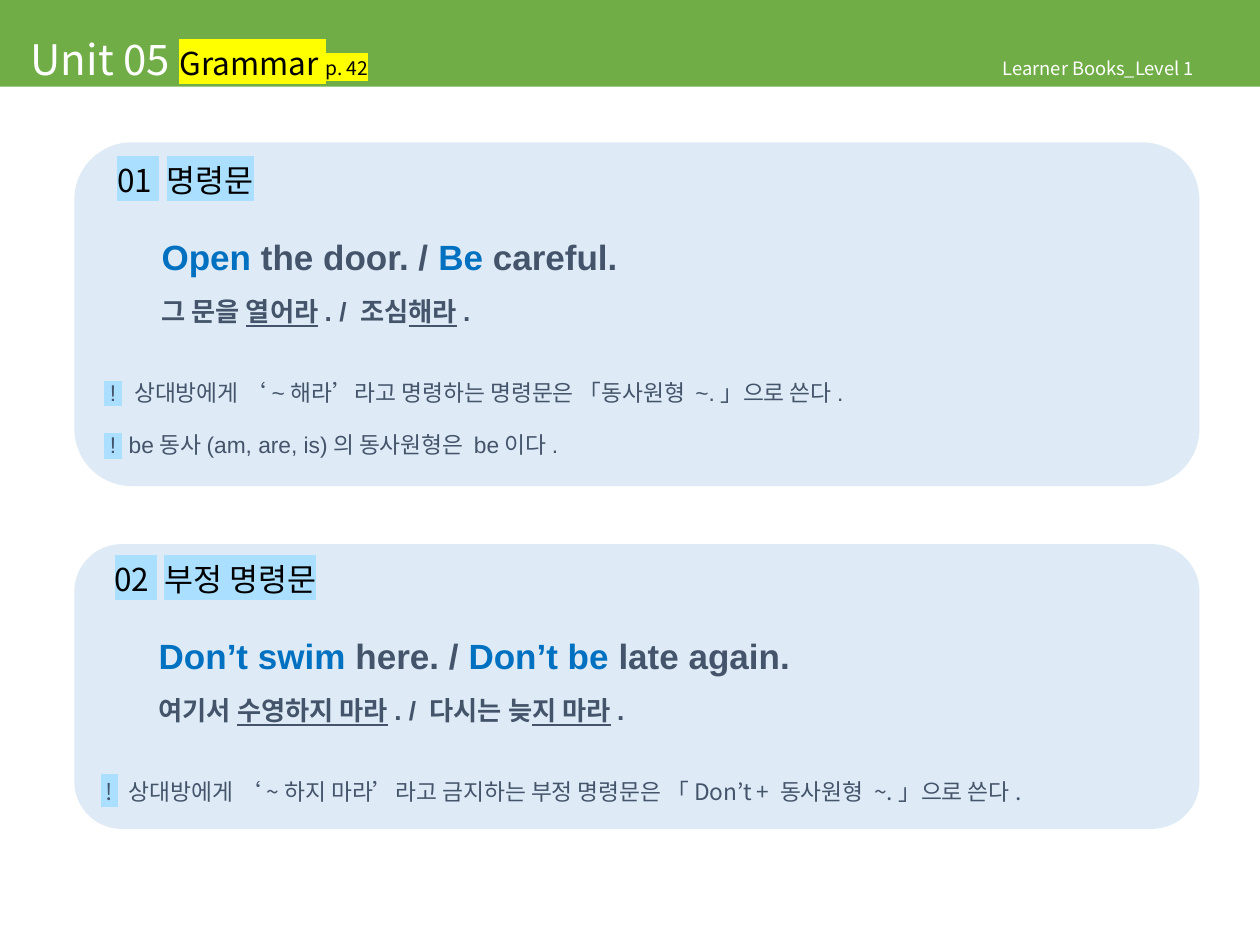
from dataclasses import dataclass

from lxml import etree
from pptx import Presentation
from pptx.dml.color import RGBColor
from pptx.enum.shapes import MSO_SHAPE
from pptx.enum.text import MSO_ANCHOR, PP_ALIGN
from pptx.oxml.ns import qn
from pptx.util import Cm, Pt

RECTANGLE = MSO_SHAPE.RECTANGLE
ROUNDED = MSO_SHAPE.ROUNDED_RECTANGLE
TOP, BOTTOM = MSO_ANCHOR.TOP, MSO_ANCHOR.BOTTOM
LEFT = PP_ALIGN.LEFT

GREEN = RGBColor(0x70, 0xAD, 0x47)
PALE_BLUE = RGBColor(0xDE, 0xEB, 0xF7)
SKY = RGBColor(0xAB, 0xDF, 0xFF)
YELLOW = RGBColor(0xFF, 0xFF, 0x00)
BLUE = RGBColor(0x00, 0x70, 0xC0)
SLATE = RGBColor(0x44, 0x54, 0x6A)
WHITE = RGBColor(0xFF, 0xFF, 0xFF)
BLACK = RGBColor(0x00, 0x00, 0x00)

KOREAN_FONT = "Noto Sans CJK KR"
LATIN_FONT = "Arial"


@dataclass(frozen=True)
class Run:
    text: str
    size: float
    color: RGBColor
    font: str = KOREAN_FONT
    bold: bool = False
    underline: bool = False
    highlight: RGBColor | None = None


@dataclass(frozen=True)
class Panel:
    top: float
    height: float
    heading: str
    english: list[tuple[str, bool]]
    korean: list[tuple[str, bool]]
    notes: list[str]
    note_font: str


HEADING_FORMAT = {"line_spacing": Pt(19)}
ENGLISH_FORMAT = {"line_spacing": Pt(20), "space_before": Pt(25)}
KOREAN_FORMAT = {"line_spacing": Pt(18), "space_before": Pt(10.5)}
FIRST_NOTE_FORMAT = {"line_spacing": Pt(28), "space_before": Pt(17)}
NOTE_FORMAT = {"line_spacing": Pt(28), "space_before": Pt(2)}

PANELS = [
    Panel(
        2.87, 6.93, "01 명령문",
        [("Open", True), (" the door. / ", False), ("Be", True), (" careful.", False)],
        [("그 문을 ", False), ("열어라", True), (". / 조심", False), ("해라", True), (".", False)],
        ["상대방에게 ‘~해라’라고 명령하는 명령문은 「동사원형 ~.」으로 쓴다.",
         "be동사(am, are, is)의 동사원형은 be이다."],
        LATIN_FONT,
    ),
    Panel(
        10.97, 5.74, "02 부정 명령문",
        [("Don’t swim ", True), ("here. / ", False), ("Don’t be", True),
         (" late again.", False)],
        [("여기서 ", False), ("수영하지 마라", True), (". / 다시는 늦", False),
         ("지 마라", True), (".", False)],
        ["상대방에게 ‘~하지 마라’라고 금지하는 부정 명령문은 「Don’t + 동사원형 ~.」으로 쓴다."],
        KOREAN_FONT,
    ),
]


def add_run(paragraph, item: Run) -> None:
    run = paragraph.add_run()
    run.text = item.text
    run.font.color.rgb = item.color
    properties = run.font._element
    if item.highlight is not None:
        highlight = etree.SubElement(properties, qn("a:highlight"))
        etree.SubElement(highlight, qn("a:srgbClr"), val=str(item.highlight))
    values = {"size": Pt(item.size), "name": item.font,
              "bold": item.bold, "underline": item.underline}
    for name, value in values.items():
        setattr(run.font, name, value)
    etree.SubElement(properties, qn("a:ea"), typeface=KOREAN_FONT)


def write_paragraph(paragraph, runs: list[Run], values: dict, indent: float = 0) -> None:
    for name, value in {"alignment": LEFT, **values}.items():
        setattr(paragraph, name, value)
    paragraph._p.get_or_add_pPr().set("marL", str(Cm(indent)))
    for item in runs:
        add_run(paragraph, item)


def add_block(slide, kind, left: float, top: float, width: float, height: float,
              fill: RGBColor):
    shape = slide.shapes.add_shape(kind, Cm(left), Cm(top), Cm(width), Cm(height))
    shape.shadow.inherit = False
    shape.fill.solid()
    shape.fill.fore_color.rgb = fill
    shape.line.fill.background()
    return shape


def format_frame(frame, values: dict) -> None:
    for name, value in {"word_wrap": True, **values}.items():
        setattr(frame, name, value)


def draw_header(slide) -> None:
    bar = add_block(slide, RECTANGLE, 0, 0, 25.4, 1.75, GREEN)
    format_frame(bar.text_frame, {"vertical_anchor": BOTTOM, "margin_left": Cm(0.62),
                                  "margin_top": 0, "margin_bottom": Cm(0.05)})
    write_paragraph(bar.text_frame.paragraphs[0], [
        Run("Unit 05 ", 24, WHITE),
        Run("Grammar ", 18, BLACK, highlight=YELLOW),
        Run("p. 42", 11, BLACK, highlight=YELLOW),
    ], {"line_spacing": 0.9})

    label = slide.shapes.add_textbox(Cm(20.04), Cm(1.1), Cm(4.9), Cm(0.66))
    format_frame(label.text_frame, {"margin_left": Cm(0.18), "margin_right": Cm(0.18),
                                    "margin_top": Cm(0.1), "margin_bottom": Cm(0.1)})
    write_paragraph(label.text_frame.paragraphs[0],
                    [Run("Learner Books_Level 1", 10.5, WHITE)], {"line_spacing": 0.9})


def draw_panel(slide, panel: Panel) -> None:
    shape = add_block(slide, ROUNDED, 1.5, panel.top, 22.68, panel.height, PALE_BLUE)
    frame = shape.text_frame
    format_frame(frame, {"vertical_anchor": TOP})
    write_paragraph(frame.paragraphs[0],
                    [Run(panel.heading, 18, BLACK, highlight=SKY)], HEADING_FORMAT, 0.28)
    english = [Run(text, 20, BLUE if key else SLATE, LATIN_FONT, bold=True)
               for text, key in panel.english]
    write_paragraph(frame.add_paragraph(), english, ENGLISH_FORMAT, 1.17)
    korean = [Run(text, 15, SLATE, LATIN_FONT, bold=True, underline=key)
              for text, key in panel.korean]
    write_paragraph(frame.add_paragraph(), korean, KOREAN_FORMAT, 1.17)
    for index, note in enumerate(panel.notes):
        runs = [Run(" ! ", 13, SLATE, panel.note_font, highlight=SKY),
                Run(f" {note}", 13, SLATE, panel.note_font)]
        write_paragraph(frame.add_paragraph(), runs,
                        NOTE_FORMAT if index else FIRST_NOTE_FORMAT)


def main() -> None:
    presentation = Presentation()
    presentation.slide_width, presentation.slide_height = Cm(25.4), Cm(19.05)
    slide = presentation.slides.add_slide(presentation.slide_layouts[6])
    draw_header(slide)
    for panel in PANELS:
        draw_panel(slide, panel)
    presentation.save("out.pptx")


if __name__ == "__main__":
    main()
